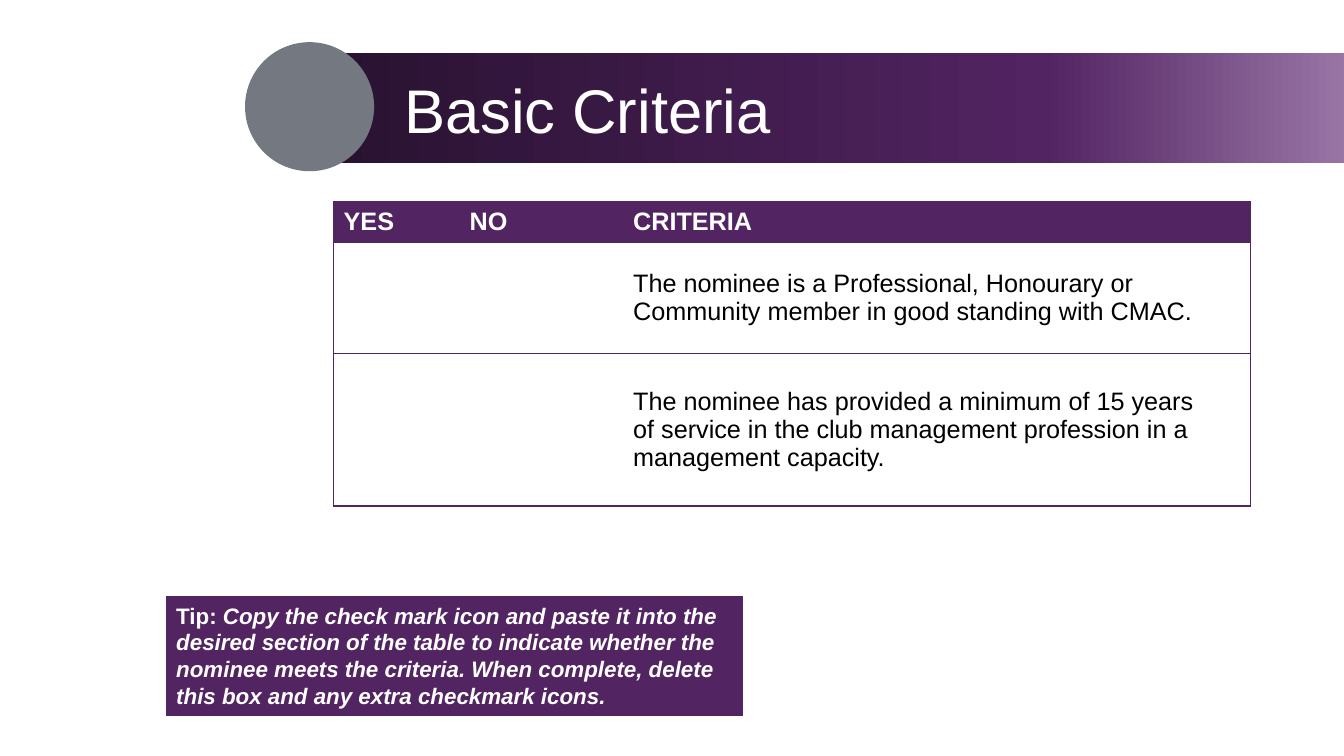
from dataclasses import dataclass

from lxml.etree import SubElement
from pptx import Presentation
from pptx.dml.color import RGBColor
from pptx.enum.shapes import MSO_SHAPE as Preset
from pptx.enum.text import MSO_ANCHOR as Anchor, PP_ALIGN as Align
from pptx.oxml.ns import qn
from pptx.util import Pt

COLORS = {
    "purple": "522462",
    "dark": "291231",
    "lilac": "E2C8EB",
    "grey": "747880",
    "white": "FFFFFF",
    "black": "000000",
}
FONT = "Arial"


@dataclass
class Frame:
    left: float
    top: float
    width: float
    height: float

    def lengths(self) -> list:
        return [Pt(n) for n in (self.left, self.top, self.width, self.height)]


@dataclass
class Row:
    height: float
    cells: tuple
    color: str = "black"
    bold: bool = False
    fill: str = "white"


BAND = Frame(238.3, 37.6, 940.3, 79.2)
CIRCLE = Frame(175, 30.1, 92.2, 92.2)
TITLE = Frame(282.2, 28.8, 612, 104.4)
TABLE = Frame(238.3, 144, 655.2, 217.4)
TIP = Frame(118.8, 426.2, 411.8, 85)

COLUMN_WIDTHS = (90, 116.8, 448.4)
ROWS = (
    Row(29.2, ("YES", "NO", "CRITERIA"), "white", True, "purple"),
    Row(79.2, ("", "", "The nominee is a Professional, Honourary or\n"
                       "Community member in good standing with CMAC.")),
    Row(109, ("", "", "The nominee has provided a minimum of 15 years\n"
                      "of service in the club management profession in a\n"
                      "management capacity.")),
)
TIP_TEXT = (
    "Copy the check mark icon and paste it into the desired section of the table "
    "to indicate whether the nominee meets the criteria. When complete, delete "
    "this box and any extra checkmark icons."
)


def rgb(name: str) -> RGBColor:
    return RGBColor.from_string(COLORS[name])


def style(font, size: float, color: str, bold: bool = False, italic: bool = False) -> None:
    font.name, font.size = FONT, Pt(size)
    font.bold, font.italic = bold, italic
    font.color.rgb = rgb(color)


def add_solid(page, preset, frame: Frame, color: str):
    shape = page.shapes.add_shape(preset, *frame.lengths())
    shape.shadow.inherit = False
    shape.fill.solid()
    shape.fill.fore_color.rgb = rgb(color)
    shape.line.fill.background()
    return shape


def add_band(page) -> None:
    band = add_solid(page, Preset.RECTANGLE, BAND, "purple")
    band.fill.gradient()
    band.fill.gradient_angle = 0
    stops = band._element.spPr.find(qn("a:gradFill")).find(qn("a:gsLst"))
    for stop in list(stops):
        stops.remove(stop)
    for percent, color in ((0, "dark"), (54, "purple"), (100, "lilac")):
        stop = SubElement(stops, qn("a:gs"), pos=str(percent * 1000))
        SubElement(stop, qn("a:srgbClr"), val=COLORS[color])


def add_title(page) -> None:
    box = page.shapes.add_textbox(*TITLE.lengths())
    frame = box.text_frame
    frame.word_wrap = True
    frame.vertical_anchor = Anchor.MIDDLE
    frame.text = "Basic Criteria"
    para = frame.paragraphs[0]
    para.line_spacing = 0.9
    style(para.runs[0].font, 44, "white")


def set_borders(cell, is_first: bool, is_last: bool) -> None:
    """Rule the cell above and below, and at the table's outer sides."""
    properties = cell._tc.get_or_add_tcPr()
    sides = {"a:lnL": is_first, "a:lnR": is_last, "a:lnT": True, "a:lnB": True}
    for index, (tag, visible) in enumerate(sides.items()):
        line = SubElement(properties, qn(tag), w=str(Pt(1)))
        properties.insert(index, line)
        if visible:
            fill = SubElement(line, qn("a:solidFill"))
            SubElement(fill, qn("a:srgbClr"), val=COLORS["purple"])
        else:
            SubElement(line, qn("a:noFill"))


def add_criteria_table(page) -> None:
    table = page.shapes.add_table(len(ROWS), len(COLUMN_WIDTHS), *TABLE.lengths()).table
    table.first_row = table.horz_banding = False
    for column, width in zip(table.columns, COLUMN_WIDTHS):
        column.width = Pt(width)
    last = len(COLUMN_WIDTHS) - 1
    for table_row, row in zip(table.rows, ROWS):
        table_row.height = Pt(row.height)
        for index, (cell, text) in enumerate(zip(table_row.cells, row.cells)):
            cell.text_frame.text = text
            cell.vertical_anchor = Anchor.MIDDLE
            cell.fill.solid()
            cell.fill.fore_color.rgb = rgb(row.fill)
            set_borders(cell, index == 0, index == last)
            for para in cell.text_frame.paragraphs:
                for span in para.runs:
                    style(span.font, 18, row.color, row.bold)


def add_tip(page) -> None:
    box = add_solid(page, Preset.RECTANGLE, TIP, "purple")
    box.line.color.rgb = rgb("purple")
    box.line.width = Pt(0.75)
    frame = box.text_frame
    frame.word_wrap = True
    frame.vertical_anchor = Anchor.TOP
    para = frame.paragraphs[0]
    para.alignment = Align.LEFT
    for text, italic in (("Tip: ", False), (TIP_TEXT, True)):
        span = para.add_run()
        span.text = text
        style(span.font, 16, "white", True, italic)


def main() -> None:
    deck = Presentation()
    deck.slide_width, deck.slide_height = Pt(960), Pt(540)
    page = deck.slides.add_slide(deck.slide_layouts[6])
    add_band(page)
    add_solid(page, Preset.OVAL, CIRCLE, "grey")
    add_title(page)
    add_criteria_table(page)
    add_tip(page)
    deck.save("out.pptx")


if __name__ == "__main__":
    main()
